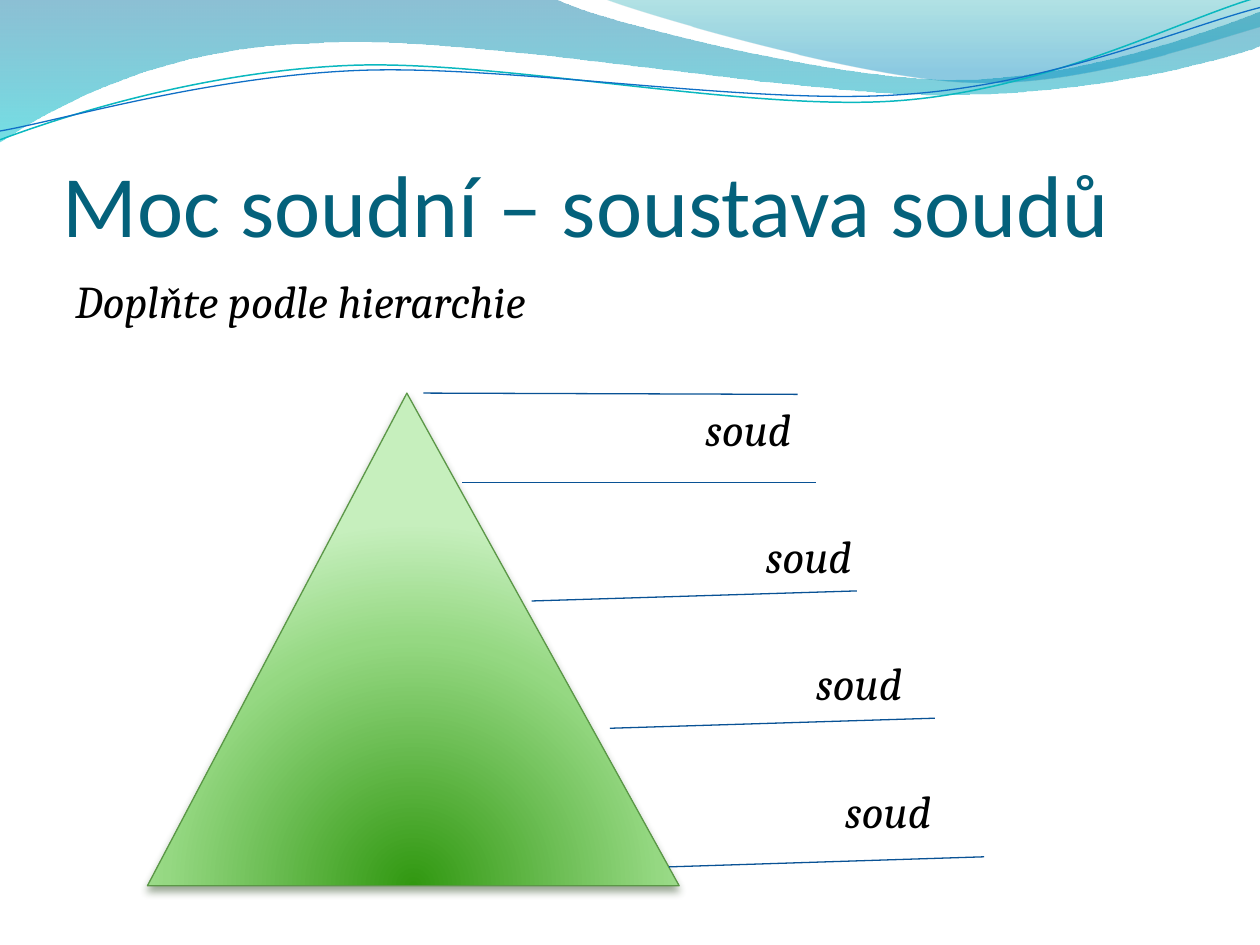
from lxml import etree
from pptx import Presentation
from pptx.dml.color import RGBColor
from pptx.enum.shapes import MSO_CONNECTOR, MSO_SHAPE
from pptx.enum.text import MSO_ANCHOR
from pptx.oxml.ns import qn
from pptx.util import Inches, Pt

TRIANGLE = MSO_SHAPE.ISOSCELES_TRIANGLE
STRAIGHT = MSO_CONNECTOR.STRAIGHT
TOP, BOTTOM = MSO_ANCHOR.TOP, MSO_ANCHOR.BOTTOM

COLORS = {
    "title": "04617B", "text": "000000", "line": "095295",
    "wave_blue": "0074A1", "wave_cyan": "00C6CF",
    "crest_teal": "00A1A9", "crest_blue": "008BBF",
    "curve_teal": "0AB8BF", "curve_blue": "0F6FC6",
    "green_dark": "319811", "green_mid": "95D882", "green_light": "C6EFBD",
    "green_line": "5B9747", "shadow": "2B4821",
}

WAVE = [(0, 0), (4.4, -0.01), (4.76, 0.17, 6.64, 0.63, 7.58, 0.63),
        (8.53, 0.63, 9.58, 0.26, 10, 0.09), (10.01, 0.36),
        (9.83, 0.44, 8.7, 0.76, 7.46, 0.75), (6.22, 0.75, 3.82, 0.28, 2.57, 0.34),
        (1.29, 0.36, 0.46, 0.83, -0.01, 1.13)]
CREST = [(4.79, -0.01), (5.09, 0.11, 6.82, 0.62, 7.69, 0.65),
         (8.56, 0.69, 9.61, 0.32, 10, 0.21), (10, 0)]
CURVE_TEAL = [(0, 1.11), (0.48, 0.93, 1.58, 0.57, 2.77, 0.52),
              (3.95, 0.47, 5.93, 0.89, 7.13, 0.8), (8.33, 0.71, 9.38, 0.15, 9.98, -0.02)]
CURVE_BLUE = [(0, 1.04), (0.47, 0.96, 1.64, 0.61, 2.83, 0.56),
              (4.03, 0.51, 5.97, 0.84, 7.17, 0.75), (8.36, 0.67, 9.41, 0.21, 10, 0.06)]

LEVEL_LINES = [(3.36, 3.12, 6.33, 3.13), (3.67, 3.83, 6.48, 3.83),
               (4.22, 4.77, 6.8, 4.69), (4.84, 5.78, 7.42, 5.7),
               (5.31, 6.88, 7.81, 6.8)]
COURT_INDENTS = [5, 5.48, 5.88, 6.11]


def rgb(name):
    return RGBColor.from_string(COLORS[name])


def child(parent, tag, **attrs):
    return etree.SubElement(parent, qn(tag), {k: str(v) for k, v in attrs.items()})


def add_color(parent, name, opacity):
    clr = child(parent, "a:srgbClr", val=COLORS[name])
    if opacity < 100:
        child(clr, "a:alpha", val=opacity * 1000)


def set_gradient(sp, stops, focus=None):
    sp.fill.gradient()
    grad = sp._element.spPr.find(qn("a:gradFill"))
    for old in list(grad):
        grad.remove(old)
    gs_list = child(grad, "a:gsLst")
    for pos, name, opacity in stops:
        add_color(child(gs_list, "a:gs", pos=pos * 1000), name, opacity)
    if focus:
        shade = child(grad, "a:path", path="circle")
        child(shade, "a:fillToRect", **{k: v * 1000 for k, v in focus.items()})
    else:
        child(grad, "a:lin", ang=90 * 60000, scaled=1)


def set_line(sp, color, width):
    sp.line.color.rgb = rgb(color)
    sp.line.width = Pt(width)


def add_curved_shape(s, segments, closed):
    points = [seg[i:i + 2] for seg in segments for i in range(0, len(seg), 2)]
    points = [(Inches(x), Inches(y)) for x, y in points]
    builder = s.shapes.build_freeform(*points[0], scale=1.0)
    builder.add_line_segments(points[1:], close=closed)
    sp = builder.convert_to_shape()
    sp.shadow.inherit = False
    steps = iter(sp._element.spPr.findall(".//" + qn("a:lnTo")))
    for seg in segments[1:]:
        step = next(steps)
        if len(seg) == 6:
            bezier = etree.Element(qn("a:cubicBezTo"))
            step.addprevious(bezier)
            for part in (step, next(steps), next(steps)):
                bezier.append(part[0])
                part.getparent().remove(part)
    return sp


def add_band(s, segments, stops):
    sp = add_curved_shape(s, segments, True)
    set_gradient(sp, stops)
    sp.line.fill.background()


def add_curve(s, segments, color, width):
    sp = add_curved_shape(s, segments, False)
    sp.fill.background()
    set_line(sp, color, width)


def add_text_frame(s, left, top, width, height, anchor, insets):
    tf = s.shapes.add_textbox(*map(Inches, (left, top, width, height))).text_frame
    tf.word_wrap = True
    tf.vertical_anchor = anchor
    tf.margin_left, tf.margin_top, tf.margin_right, tf.margin_bottom = map(Inches, insets)
    return tf


def add_run(p, text, font, size, color, italic=False):
    r = p.add_run()
    r.text = text
    r.font.name = font
    r.font.size = Pt(size)
    r.font.italic = italic
    r.font.color.rgb = rgb(color)


def add_body(s):
    tf = add_text_frame(s, 0.5, 2.12, 9, 4.8, TOP, (0.1, 0.05, 0.1, 0.05))
    p = tf.paragraphs[0]
    p.space_before = Pt(5.2)
    add_run(p, "Doplňte podle hierarchie", "Cambria", 26, "text", True)
    for indent in COURT_INDENTS:
        p = tf.add_paragraph()
        p.space_before = Pt(41.6)
        p._p.get_or_add_pPr().set("marL", str(Inches(indent)))
        add_run(p, "soud", "Cambria", 26, "text", True)


def add_pyramid(s):
    sp = s.shapes.add_shape(TRIANGLE, *map(Inches, (1.17, 3.12, 4.22, 3.91)))
    sp.adjustments[0] = 0.488
    set_gradient(sp, [(0, "green_dark", 100), (68, "green_mid", 100),
                      (100, "green_light", 100)], dict(l=50, t=130, r=50, b=-30))
    set_line(sp, "green_line", 0.75)
    sp.shadow.inherit = False
    effects = sp._element.spPr.find(qn("a:effectLst"))
    shadow = child(effects, "a:outerShdw", blurRad=Pt(4.5), dist=Pt(3),
                   dir=90 * 60000, rotWithShape=0)
    add_color(shadow, "shadow", 48)


def add_level_line(s, ends):
    line = s.shapes.add_connector(STRAIGHT, *map(Inches, ends))
    set_line(line, "line", 0.75)
    child(line._element.spPr, "a:effectLst")


def main():
    prs = Presentation()
    prs.slide_width, prs.slide_height = Inches(10), Inches(7.5)
    s = prs.slides.add_slide(prs.slide_layouts[6])
    add_band(s, WAVE, [(0, "wave_blue", 45), (100, "wave_cyan", 55)])
    add_band(s, CREST, [(0, "crest_teal", 30), (80, "crest_blue", 45)])
    add_curve(s, CURVE_TEAL, "curve_teal", 0.85)
    add_curve(s, CURVE_BLUE, "curve_blue", 0.75)
    tf = add_text_frame(s, 0.5, 0.77, 9, 1.25, BOTTOM, (0, 0.05, 0, 0))
    add_run(tf.paragraphs[0], "Moc soudní – soustava soudů", "Calibri", 50, "title")
    add_body(s)
    add_pyramid(s)
    for ends in LEVEL_LINES:
        add_level_line(s, ends)
    prs.save("out.pptx")


if __name__ == "__main__":
    main()
